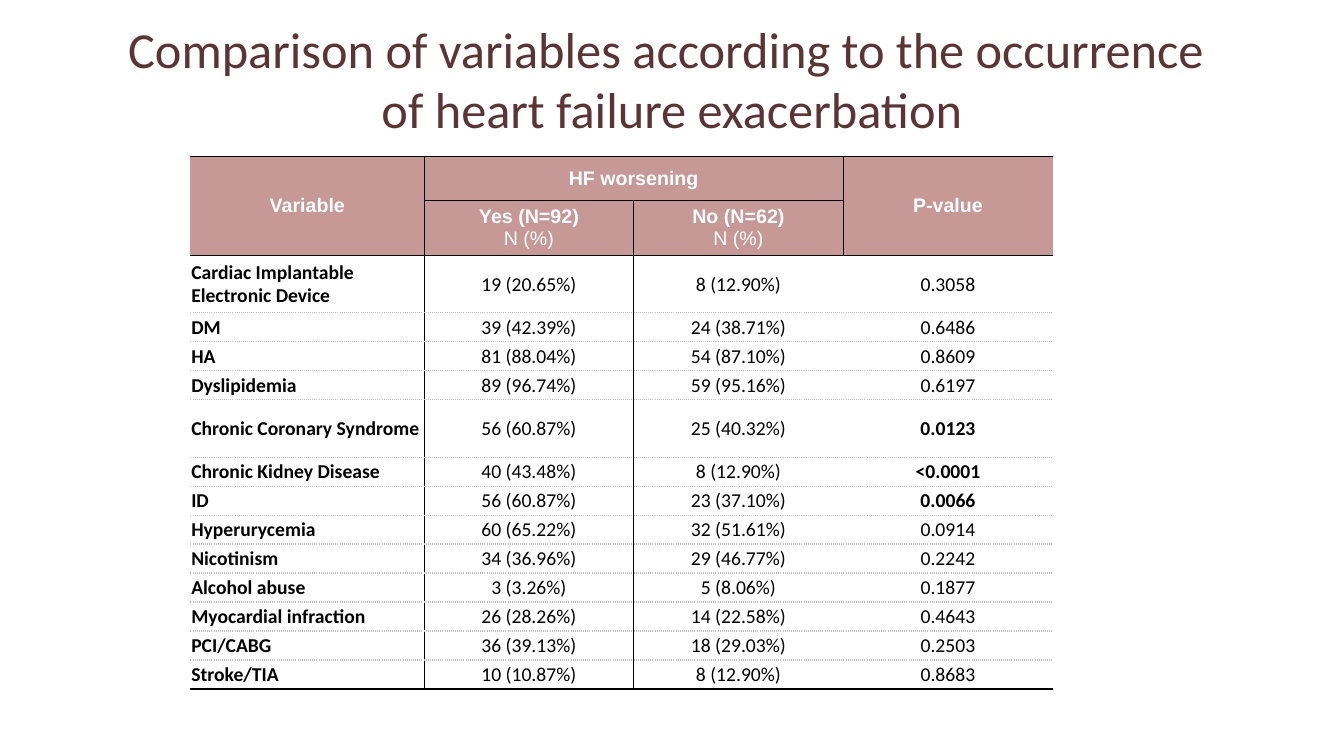
from pptx import Presentation
from pptx import oxml
from pptx import util as u
from pptx.dml import color
from pptx.enum import text
from pptx.oxml import ns

COLOURS = {
    "title": "5B3433",
    "outline": "404040",
    "header": "C69896",
    "header_text": "FFFFFF",
    "body_text": "000000",
    "rule": "000000",
    "dotted": "BFBFBF",
}
NO_STYLE = "{2D5ABB26-0587-4C30-8999-92F81FD0307C}"
COLUMN_WIDTHS = [5.89, 5.28, 5.28, 5.28]
HEADER_HEIGHTS = [1.12, 1.37]
ROW_HEIGHT, TALL_ROW_HEIGHT = 0.73, 1.45
TALL_ROWS = {"Cardiac Implantable Electronic Device", "Chronic Coronary Syndrome"}

# Row, column, rows spanned, columns spanned, lines
HEADERS = [
    (0, 0, 2, 1, ["Variable"]),
    (0, 1, 1, 2, ["HF worsening"]),
    (0, 3, 2, 1, ["P-value"]),
    (1, 1, 1, 1, ["Yes (N=92)", "N (%)"]),
    (1, 2, 1, 1, ["No (N=62)", "N (%)"]),
]
VARIABLES = [
    ("Cardiac Implantable Electronic Device", "19 (20.65%)", "8 (12.90%)", "0.3058"),
    ("DM", "39 (42.39%)", "24 (38.71%)", "0.6486"),
    ("HA", "81 (88.04%)", "54 (87.10%)", "0.8609"),
    ("Dyslipidemia", "89 (96.74%)", "59 (95.16%)", "0.6197"),
    ("Chronic Coronary Syndrome", "56 (60.87%)", "25 (40.32%)", "0.0123"),
    ("Chronic Kidney Disease", "40 (43.48%)", "8 (12.90%)", "<0.0001"),
    ("ID", "56 (60.87%)", "23 (37.10%)", "0.0066"),
    ("Hyperurycemia", "60 (65.22%)", "32 (51.61%)", "0.0914"),
    ("Nicotinism", "34 (36.96%)", "29 (46.77%)", "0.2242"),
    ("Alcohol abuse", "3 (3.26%)", "5 (8.06%)", "0.1877"),
    ("Myocardial infraction", "26 (28.26%)", "14 (22.58%)", "0.4643"),
    ("PCI/CABG", "36 (39.13%)", "18 (29.03%)", "0.2503"),
    ("Stroke/TIA", "10 (10.87%)", "8 (12.90%)", "0.8683"),
]


def add_run(paragraph, words, font_name, size, colour, bold=False):
    run = paragraph.add_run()
    run.text = words
    run.font.name = font_name
    run.font.size = u.Pt(size)
    run.font.bold = bold
    run.font.color.rgb = color.RGBColor.from_string(COLOURS[colour])
    return run


def add_text_effects(run):
    """Give a run a faint outline and a soft shadow."""
    outline = oxml.parse_xml(
        f'<a:ln {ns.nsdecls("a")} w="9525"><a:solidFill><a:srgbClr val="{COLOURS["outline"]}">'
        '<a:alpha val="10000"/></a:srgbClr></a:solidFill></a:ln>')
    shadow = oxml.parse_xml(
        f'<a:effectLst {ns.nsdecls("a")}><a:outerShdw blurRad="38100" dist="38100" dir="2700000">'
        '<a:srgbClr val="000000"><a:alpha val="43000"/></a:srgbClr></a:outerShdw></a:effectLst>')
    properties = run.font._element
    properties.insert(0, outline)
    properties.insert(2, shadow)


def add_title(slide, left, top, width, height):
    title = slide.shapes.title
    title.left, title.top, title.width, title.height = map(u.Cm, (left, top, width, height))
    frame = title.text_frame
    frame.word_wrap = True
    frame.auto_size = text.MSO_AUTO_SIZE.NONE
    frame.vertical_anchor = text.MSO_ANCHOR.MIDDLE
    paragraph = frame.paragraphs[0]
    paragraph.alignment = text.PP_ALIGN.CENTER
    lines = ["Comparison of variables according to the occurrence ",
             "of heart failure exacerbation"]
    for index, line in enumerate(lines):
        if index:
            paragraph.add_line_break()
        add_text_effects(add_run(paragraph, line, "Calibri", 36, "title"))


def add_border(cell, side, colour, dash="solid"):
    cell._tc.get_or_add_tcPr().append(oxml.parse_xml(
        f'<a:ln{side} {ns.nsdecls("a")} w="12700"><a:solidFill>'
        f'<a:srgbClr val="{COLOURS[colour]}"/></a:solidFill>'
        f'<a:prstDash val="{dash}"/></a:ln{side}>'))


def add_borders(cell, row, column, last_row):
    """Solid rules frame the header, the first column and the last row."""
    if column == 1:
        add_border(cell, "L", "rule")
    if column == 0:
        add_border(cell, "R", "rule")
    if row != 1 or column in (1, 2):
        add_border(cell, "T", *(("rule",) if row <= 2 else ("dotted", "sysDot")))
    solid_below = row <= 1 or row == last_row
    add_border(cell, "B", *(("rule",) if solid_below else ("dotted", "sysDot")))


def fill_header(table):
    for row, column, row_span, column_span, lines in HEADERS:
        cell = table.cell(row, column)
        if row_span * column_span > 1:
            cell.merge(table.cell(row + row_span - 1, column + column_span - 1))
        for index, line in enumerate(lines):
            frame = cell.text_frame
            paragraph = frame.add_paragraph() if index else frame.paragraphs[0]
            paragraph.alignment = text.PP_ALIGN.CENTER
            add_run(paragraph, line, "Arial", 14, "header_text", bold=index == 0)


def fill_body(table):
    for row, values in enumerate(VARIABLES, len(HEADER_HEIGHTS)):
        significant = float(values[3].lstrip("<")) < 0.05
        for column, value in enumerate(values):
            cell = table.cell(row, column)
            cell.margin_left = cell.margin_right = cell.margin_top = u.Cm(0.02)
            cell.margin_bottom = 0
            paragraph = cell.text_frame.paragraphs[0]
            paragraph.alignment = text.PP_ALIGN.CENTER if column else text.PP_ALIGN.LEFT
            bold = column == 0 or (column == 3 and significant)
            add_run(paragraph, value, "Calibri", 14, "body_text", bold)


def add_comparison_table(slide, left, top):
    heights = HEADER_HEIGHTS + [
        TALL_ROW_HEIGHT if values[0] in TALL_ROWS else ROW_HEIGHT for values in VARIABLES]
    frame = slide.shapes.add_table(
        len(heights), len(COLUMN_WIDTHS), u.Cm(left), u.Cm(top),
        u.Cm(sum(COLUMN_WIDTHS)), u.Cm(sum(heights)))
    table = frame.table
    table.first_row = table.horz_banding = False
    table._tbl.tblPr.find(ns.qn("a:tableStyleId")).text = NO_STYLE
    for column, width in zip(table.columns, COLUMN_WIDTHS):
        column.width = u.Cm(width)
    for row, height in zip(table.rows, heights):
        row.height = u.Cm(height)

    fill_header(table)
    fill_body(table)

    # Borders, anchors and fills
    for row in range(len(heights)):
        for column in range(len(COLUMN_WIDTHS)):
            cell = table.cell(row, column)
            cell.vertical_anchor = text.MSO_ANCHOR.MIDDLE
            add_borders(cell, row, column, len(heights) - 1)
            if row < len(HEADER_HEIGHTS):
                cell.fill.solid()
                cell.fill.fore_color.rgb = color.RGBColor.from_string(COLOURS["header"])
            else:
                cell.fill.background()


def main():
    presentation = Presentation()
    presentation.slide_width, presentation.slide_height = u.Cm(33.87), u.Cm(19.05)
    slide = presentation.slides.add_slide(presentation.slide_layouts[5])
    add_title(slide, 0, 0.74, 33.87, 2.46)
    add_comparison_table(slide, 4.8, 3.94)
    presentation.save("out.pptx")


if __name__ == "__main__":
    main()
